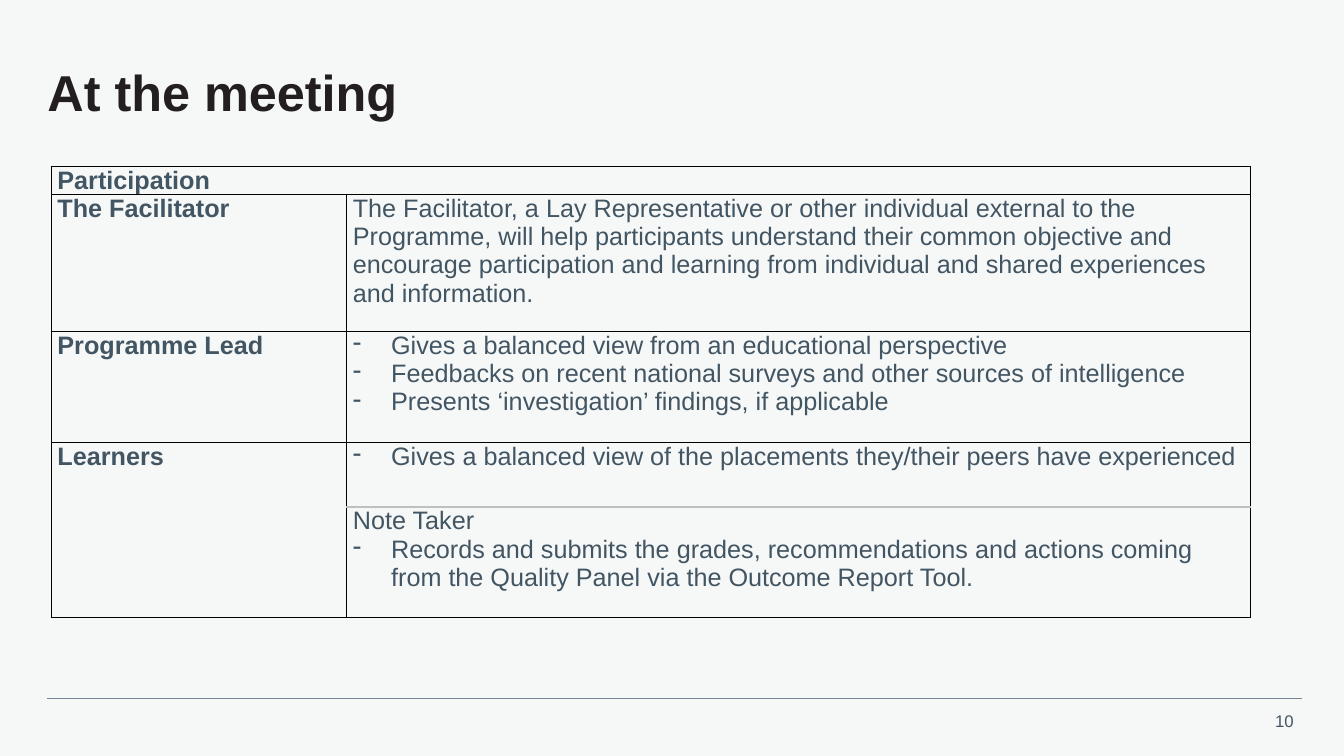
from pptx import Presentation
from pptx.dml.color import RGBColor
from pptx.enum import shapes, text
from pptx.oxml.ns import qn
from pptx.util import Inches, Pt
from lxml import etree

COLORS = {"back": "F6F8F8", "title": "231F20", "body": "425563",
          "rule": "768692", "border": "000000", "light": "BFBFBF"}


def write(p, content, size=18, color="body", bold=False, dash=False, align=None):
    if dash:
        pPr = p._p.get_or_add_pPr()
        pPr.set("marL", str(Inches(0.38)))
        pPr.set("indent", str(Inches(-0.38)))
        etree.SubElement(pPr, qn("a:buChar")).set("char", "-")
    p.alignment = align
    r = p.add_run()
    r.text = content
    r.font.name = "Arial"
    r.font.size = Pt(size)
    r.font.bold = bold
    r.font.color.rgb = RGBColor.from_string(COLORS[color])


def set_border(cell, side, color):
    ln = etree.SubElement(cell._tc.get_or_add_tcPr(), qn(f"a:ln{side}"))
    ln.set("w", str(Pt(1)))
    if color is None:
        etree.SubElement(ln, qn("a:noFill"))
    else:
        fill = etree.SubElement(ln, qn("a:solidFill"))
        etree.SubElement(fill, qn("a:srgbClr")).set("val", COLORS[color])


prs = Presentation()
prs.slide_width = Inches(13.33)
prs.slide_height = Inches(7.5)
s = prs.slides.add_slide(prs.slide_layouts[5])
s.background.fill.solid()
s.background.fill.fore_color.rgb = RGBColor.from_string(COLORS["back"])

title = s.shapes.title
title.left, title.top = Inches(0.47), Inches(0.47)
title.width, title.height = Inches(12.47), Inches(0.95)
tf = title.text_frame
tf.margin_left = tf.margin_right = tf.margin_top = tf.margin_bottom = 0
tf.vertical_anchor = text.MSO_ANCHOR.MIDDLE
tf.paragraphs[0].line_spacing = 0.9
write(tf.paragraphs[0], "At the meeting", size=36, color="title", bold=True,
      align=text.PP_ALIGN.LEFT)

rows = [
    (0.28, "Participation", []),
    (1.36, "The Facilitator", [
        ("The Facilitator, a Lay Representative or other individual external to the "
         "Programme, will help participants understand their common objective and "
         "encourage participation and learning from individual and shared experiences "
         "and information.", False)]),
    (1.1, "Programme Lead", [
        ("Gives a balanced view from an educational perspective", True),
        ("Feedbacks on recent national surveys and other sources of intelligence", True),
        ("Presents ‘investigation’ findings, if applicable", True)]),
    (0.64, "Learners", [
        ("Gives a balanced view of the placements they/their peers have experienced", True)]),
    (1.1, "", [
        ("Note Taker", False),
        ("Records and submits the grades, recommendations and actions coming "
         "from the Quality Panel via the Outcome Report Tool.", True)]),
]
inner_borders = {(3, 0, "B"): None, (4, 0, "T"): None,
                 (3, 1, "B"): "light", (4, 1, "T"): "light"}

frame = s.shapes.add_table(len(rows), 2, Inches(0.51), Inches(1.65),
                           Inches(11.89), Inches(4.48))
table = frame.table
table.first_row = table.horz_banding = False
table.columns[0].width = Inches(2.93)
table.columns[1].width = Inches(8.96)
table.cell(0, 0).merge(table.cell(0, 1))

for i, (height, role, duties) in enumerate(rows):
    table.rows[i].height = Inches(height)
    for j in range(2):
        cell = table.cell(i, j)
        cell.margin_left = cell.margin_right = Inches(0.06)
        cell.margin_top = cell.margin_bottom = 0
        for side in "LRTB":
            set_border(cell, side, inner_borders.get((i, j, side), "border"))
        cell.fill.background()
    if role:
        write(table.cell(i, 0).text_frame.paragraphs[0], role, bold=True)
    tf = table.cell(i, 1).text_frame
    for n, (duty, dash) in enumerate(duties):
        p = tf.add_paragraph() if n else tf.paragraphs[0]
        write(p, duty, dash=dash)

rule = s.shapes.add_connector(shapes.MSO_CONNECTOR.STRAIGHT, Inches(0.47), Inches(6.93),
                              Inches(12.91), Inches(6.93))
rule.line.color.rgb = RGBColor.from_string(COLORS["rule"])
rule.line.width = Pt(0.5)
etree.SubElement(rule._element.spPr, qn("a:effectLst"))

number = s.shapes.add_textbox(Inches(12.52), Inches(7), Inches(0.41), Inches(0.3))
number.text_frame.word_wrap = False
write(number.text_frame.paragraphs[0], "10", size=12, align=text.PP_ALIGN.RIGHT)

prs.save("out.pptx")
